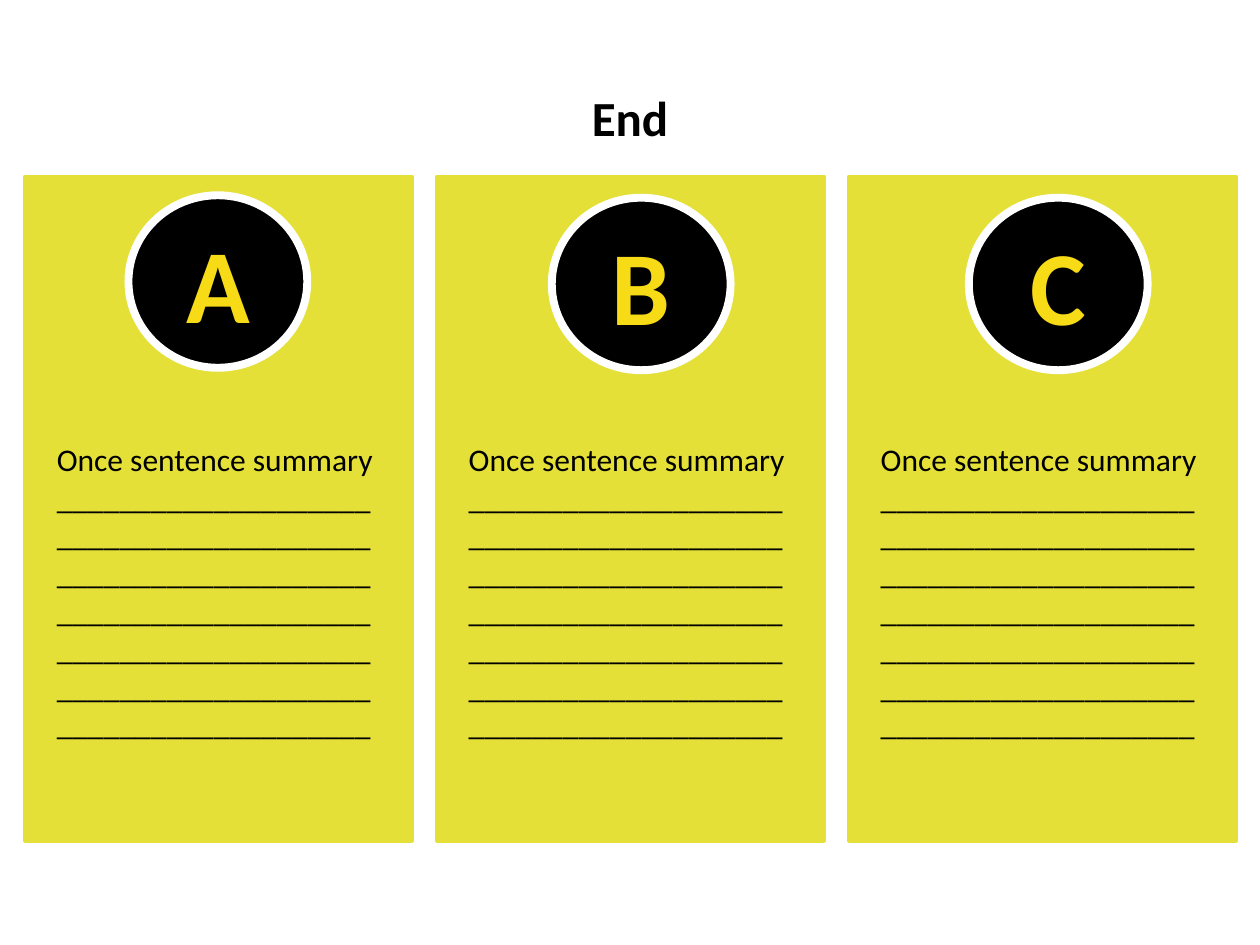
import pptx
import pptx.util
import pptx.dml.color
import pptx.enum.shapes
import pptx.enum.text

Pt = pptx.util.Pt
BLACK = pptx.dml.color.RGBColor(0x00, 0x00, 0x00)
WHITE = pptx.dml.color.RGBColor(0xFF, 0xFF, 0xFF)
LIME = pptx.dml.color.RGBColor(0xE4, 0xE0, 0x38)
YELLOW = pptx.dml.color.RGBColor(0xF6, 0xDB, 0x16)
SHAPES = pptx.enum.shapes.MSO_SHAPE
ALIGN = pptx.enum.text.PP_ALIGN
ANCHOR = pptx.enum.text.MSO_ANCHOR

MARGIN, CARD_TOP, CARD_WIDTH, CARD_HEIGHT, CARD_GAP = 14.4, 100.8, 221, 380, 14.4
BADGES = [("A", 59, 10.8), ("B", 65.5, 12.2), ("C", 68.4, 12.2)]
WRITING_LINES, UNDERSCORES_PER_LINE = 7, 20


def write(frame, text, size, color=BLACK, bold=False, align=ALIGN.LEFT, anchor=ANCHOR.TOP):
    """Fill a text frame with one paragraph per line of text."""
    frame.word_wrap = True
    frame.vertical_anchor = anchor
    frame.text = text
    for paragraph in frame.paragraphs:
        paragraph.alignment = align
        font = paragraph.runs[0].font
        font.name, font.size, font.bold = "Calibri", Pt(size), bold
        font.color.rgb = color


def add_filled(slide, preset, left, top, width, height, fill, line, weight):
    """Add a flat preset shape with a solid fill and outline."""
    shape = slide.shapes.add_shape(preset, Pt(left), Pt(top), Pt(width), Pt(height))
    shape.shadow.inherit = False
    shape.fill.solid()
    shape.fill.fore_color.rgb = fill
    shape.line.color.rgb = line
    shape.line.width = Pt(weight)
    return shape


def add_title(slide, left, top, width, height):
    """Place the heading in the title placeholder."""
    title = slide.shapes.title
    title.left, title.top = Pt(left), Pt(top)
    title.width, title.height = Pt(width), Pt(height)
    write(title.text_frame, "End", 28, bold=True, align=ALIGN.CENTER, anchor=ANCHOR.MIDDLE)


def add_summary_card(slide, left, top, width, height, letter, badge_x, badge_y):
    """Draw a card with a lettered badge and lines for a summary."""
    add_filled(slide, SHAPES.RECTANGLE, left, top, width, height, LIME, LIME, 2)
    badge = add_filled(slide, SHAPES.OVAL, left + badge_x, top + badge_y,
                       102.2, 98.6, BLACK, WHITE, 4.5)
    write(badge.text_frame, letter, 60, color=YELLOW, bold=True,
          align=ALIGN.CENTER, anchor=ANCHOR.MIDDLE)
    summary = slide.shapes.add_textbox(Pt(left + 11), Pt(top + 147),
                                       Pt(width - 22), Pt(181.4))
    blanks = "_" * (WRITING_LINES * UNDERSCORES_PER_LINE)
    write(summary.text_frame, "Once sentence summary\n" + blanks, 18)


def main():
    """Build and save the slide."""
    deck = pptx.Presentation()
    deck.slide_width, deck.slide_height = Pt(720), Pt(540)
    slide = deck.slides.add_slide(deck.slide_layouts.get_by_name("Title Only"))
    add_title(slide, 36, 21.6, 648, 90)
    for column, (letter, badge_x, badge_y) in enumerate(BADGES):
        left = MARGIN + column * (CARD_WIDTH + CARD_GAP)
        add_summary_card(slide, left, CARD_TOP, CARD_WIDTH, CARD_HEIGHT,
                         letter, badge_x, badge_y)
    deck.save("out.pptx")


if __name__ == "__main__":
    main()
